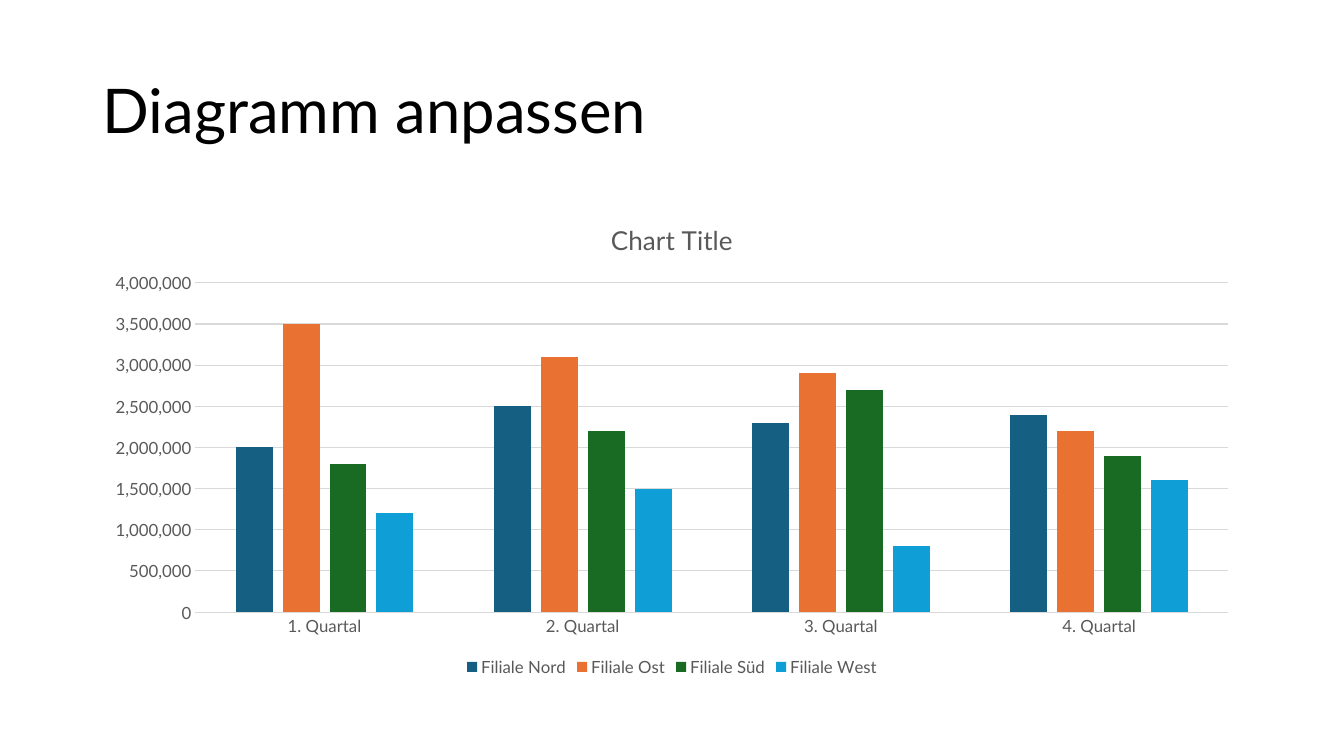
from pptx import Presentation
from pptx.chart.data import CategoryChartData
from pptx.dml.color import RGBColor
from pptx.enum.chart import XL_CHART_TYPE as ChartType, XL_LEGEND_POSITION as LegendPosition
from pptx.enum.chart import XL_TICK_MARK as TickMark
from pptx.enum.text import MSO_ANCHOR as Anchor, PP_ALIGN as Align
from pptx.util import Cm, Pt

FONT = "Lato"
BLACK = "000000"
GRAY = "595959"
LIGHT_GRAY = "D9D9D9"
LEFT, WIDTH = Cm(2.33), Cm(29.21)
QUARTERS = [f"{number}. Quartal" for number in range(1, 5)]
BRANCHES = [
    ("Filiale Nord", "156082", (2000000, 2500000, 2300000, 2400000)),
    ("Filiale Ost", "E97132", (3500000, 3100000, 2900000, 2200000)),
    ("Filiale Süd", "196B24", (1800000, 2200000, 2700000, 1900000)),
    ("Filiale West", "0F9ED5", (1200000, 1500000, 800000, 1600000)),
]


def paint(color_format, color):
    """Set a colour from a hex string."""
    color_format.rgb = RGBColor.from_string(color)


def style_font(font, size, color):
    """Set family, size and colour of a font."""
    font.name = FONT
    font.size = Pt(size)
    font.bold = False
    paint(font.color, color)


def style_line(line):
    """Make a line thin and light gray."""
    line.width = Pt(0.75)
    paint(line.color, LIGHT_GRAY)


def add_title(slide, text):
    """Place and fill the title placeholder."""
    title = slide.shapes.title
    title.left, title.top, title.width, title.height = LEFT, Cm(1.01), WIDTH, Cm(3.68)
    frame = title.text_frame
    frame.word_wrap = True
    frame.vertical_anchor = Anchor.MIDDLE
    para = frame.paragraphs[0]
    para.alignment = Align.LEFT
    para.line_spacing = 0.9
    span = para.add_run()
    span.text = text
    style_font(span.font, 44, BLACK)


def add_chart_title(chart, text):
    """Write the heading above the plot."""
    chart.has_title = True
    chart.chart_title.include_in_layout = False
    span = chart.chart_title.text_frame.paragraphs[0].add_run()
    span.text = text
    style_font(span.font, 18.6, GRAY)


def style_axes(chart):
    """Format both axes and the gridlines."""
    for axis in (chart.category_axis, chart.value_axis):
        axis.major_tick_mark = axis.minor_tick_mark = TickMark.NONE
        style_font(axis.tick_labels.font, 12, GRAY)
    style_line(chart.category_axis.format.line)
    values = chart.value_axis
    values.minimum_scale, values.maximum_scale, values.major_unit = 0, 4000000, 500000
    values.format.line.fill.background()
    values.has_major_gridlines = True
    style_line(values.major_gridlines.format.line)
    values.tick_labels.number_format = "#,##0"
    values.tick_labels.number_format_is_linked = False


def add_legend(chart):
    """Show the legend below the plot."""
    chart.has_legend = True
    chart.legend.position = LegendPosition.BOTTOM
    chart.legend.include_in_layout = False
    style_font(chart.legend.font, 12, GRAY)


def add_sales_chart(slide):
    """Add the clustered columns of sales by branch and quarter."""
    data = CategoryChartData(number_format="#,##0")
    data.categories = QUARTERS
    for name, _, sales in BRANCHES:
        data.add_series(name, sales)
    frame = slide.shapes.add_chart(
        ChartType.COLUMN_CLUSTERED, LEFT, Cm(5.07), WIDTH, Cm(12.09), data)
    chart = frame.chart
    style_font(chart.font, 10, BLACK)
    add_chart_title(chart, "Chart Title")
    style_axes(chart)
    add_legend(chart)
    plot = chart.plots[0]
    plot.gap_width, plot.overlap = 219, -27
    plot.vary_by_categories = False
    for series, (_, color, _) in zip(plot.series, BRANCHES):
        series.invert_if_negative = False
        series.format.fill.solid()
        paint(series.format.fill.fore_color, color)


def main():
    """Build and save the slide."""
    deck = Presentation()
    deck.slide_width, deck.slide_height = Cm(33.87), Cm(19.05)
    page = deck.slides.add_slide(deck.slide_layouts[5])
    add_title(page, "Diagramm anpassen")
    add_sales_chart(page)
    deck.save("out.pptx")


if __name__ == "__main__":
    main()
